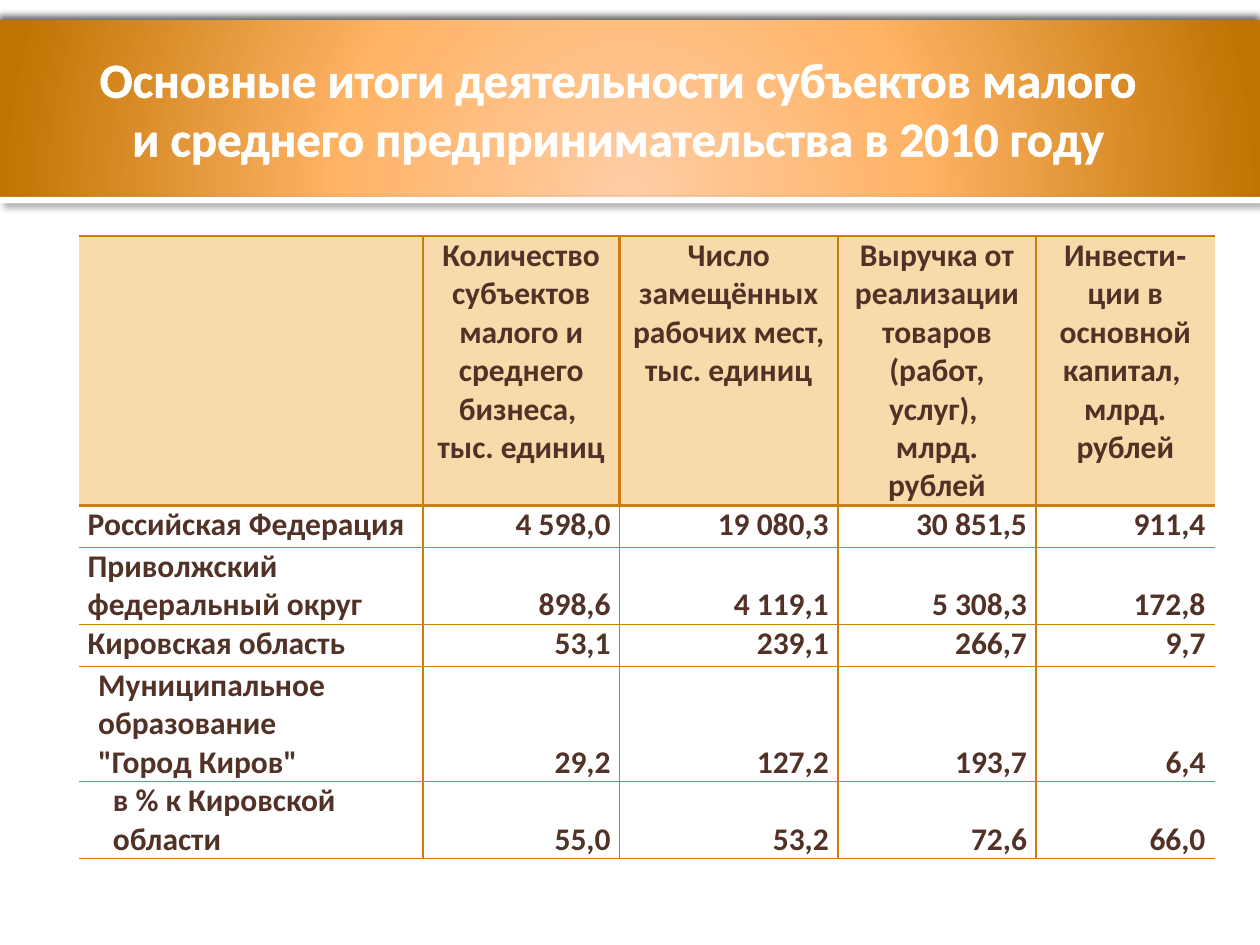
from pptx import Presentation
from pptx.dml.color import RGBColor as RGB
from pptx.enum.shapes import MSO_SHAPE as SHAPE
from pptx.enum.text import MSO_ANCHOR as ANCHOR, PP_ALIGN as ALIGN
from pptx.oxml import parse_xml
from pptx.oxml.ns import nsdecls
from pptx.util import Pt

COLORS = {"rule": "C87D0E", "header": "F9DAAB", "body": "FFFFFF",
          "ink": "523227", "white": "FFFFFF", "shadow": "000000"}
GLOW = [(0, "FFCDA5"), (46, "FFB365"), (100, "C07300")]
TITLE = ("Основные итоги деятельности субъектов малого и "
         "среднего предпринимательства в 2010 году")
HEADERS = [
    [],
    ["Количество субъектов малого и среднего бизнеса, ", "тыс. единиц"],
    ["Число замещённых рабочих мест, тыс. единиц"],
    ["Выручка от реализации товаров (работ, услуг), ", "млрд. рублей"],
    [("Инвести", "-", "ции в основной капитал, "), "млрд. рублей"],
]
REGIONS = [
    (["Российская Федерация"], 0, ["4 598,0", "19 080,3", "30 851,5", "911,4"]),
    (["Приволжский \vфедеральный округ"], 0, ["898,6", "4 119,1", "5 308,3", "172,8"]),
    (["Кировская область"], 0, ["53,1", "239,1", "266,7", "9,7"]),
    (["Муниципальное образование", "\"Город Киров\""], 6, ["29,2", "127,2", "193,7", "6,4"]),
    (["в % к Кировской области"], 14.4, ["55,0", "53,2", "72,6", "66,0"]),
]
COL_WIDTHS = [196.7, 112.5, 124.7, 113.3, 102]
ROW_HEIGHTS = [151.2, 24, 43.2, 24, 65, 43.2]
BOTTOM_ROWS = {2, 4, 5}
CELL_FORMAT = {"margin_left": Pt(5.2), "margin_right": Pt(5.2),
               "margin_top": 0, "margin_bottom": 0}
TITLE_FORMAT = {"word_wrap": True, "vertical_anchor": ANCHOR.MIDDLE,
                "margin_left": Pt(3.6), "margin_right": Pt(3.6)}


def apply(target, formats):
    for name, value in formats.items():
        setattr(target, name, value)


def solid_xml(color):
    return f'<a:solidFill><a:srgbClr val="{color}"/></a:solidFill>'


def shadow_element(alpha, blur, distance, angle):
    return parse_xml(
        f'<a:outerShdw {nsdecls("a")} blurRad="{Pt(blur)}" dist="{Pt(distance)}" '
        f'dir="{angle * 60000}" algn="tl" rotWithShape="0">'
        f'<a:srgbClr val="{COLORS["shadow"]}"><a:alpha val="{alpha * 1000}"/>'
        '</a:srgbClr></a:outerShdw>')


def add_band(slide, top, height, *shadow):
    band = slide.shapes.add_shape(SHAPE.RECTANGLE, 0, Pt(top), Pt(720), Pt(height))
    band.fill.solid()
    band.fill.fore_color.rgb = RGB.from_string(COLORS["white"])
    band.line.fill.background()
    band.shadow.inherit = False
    effects = band.element.spPr.find("{*}effectLst")
    effects.append(shadow_element(*shadow))
    return band


def add_glow(band):
    stops = "".join(f'<a:gs pos="{pos * 1000}"><a:srgbClr val="{color}"/></a:gs>'
                    for pos, color in GLOW)
    properties = band.element.spPr
    properties.replace(properties.find("{*}solidFill"), parse_xml(
        f'<a:gradFill {nsdecls("a")} rotWithShape="1"><a:gsLst>{stops}</a:gsLst>'
        '<a:path path="circle"><a:fillToRect l="50000" t="155000" r="50000" '
        'b="-55000"/></a:path></a:gradFill>'))


def style_font(font, size, color, name="Calibri"):
    apply(font, {"size": Pt(size), "bold": True, "name": name})
    font.color.rgb = RGB.from_string(color)


def add_title(slide):
    title = slide.shapes.add_textbox(Pt(44.6), Pt(16.5), Pt(617), Pt(90))
    apply(title.text_frame, TITLE_FORMAT)
    heading = title.text_frame.paragraphs[0]
    heading.alignment = ALIGN.CENTER
    run = heading.add_run()
    run.text = TITLE
    style_font(run.font, 28, COLORS["white"])
    properties = run.font.fill._xPr
    properties.insert(0, parse_xml(
        f'<a:ln {nsdecls("a")} w="{Pt(1.45)}">{solid_xml(COLORS["white"])}</a:ln>'))
    effects = parse_xml(f'<a:effectLst {nsdecls("a")}/>')
    effects.append(shadow_element(40, 2, 2, 45))
    properties.find("{*}solidFill").addnext(effects)


def fill_cell(cell, lines, align, indent=0):
    for number, line in enumerate(lines):
        frame = cell.text_frame
        paragraph = frame.add_paragraph() if number else frame.paragraphs[0]
        paragraph.alignment = align
        if indent:
            paragraph._p.get_or_add_pPr().set("marL", str(Pt(indent)))
        for index, part in enumerate([line] if isinstance(line, str) else line):
            for piece_number, piece in enumerate(part.split("\v")):
                if piece_number:
                    paragraph.add_line_break()
                run = paragraph.add_run()
                run.text = piece
                style_font(run.font, 18, COLORS["ink"],
                           "Arial" if part == "-" else "Calibri")


def rule_cell(cell, row, column):
    width = 1 if row else 1.5
    widths = {"L": width if column else 0,
              "R": width if column < len(COL_WIDTHS) - 1 else 0,
              "T": 1.5 if row < 2 else 1, "B": width}
    properties = cell._tc.get_or_add_tcPr()
    for side, points in widths.items():
        paint = solid_xml(COLORS["rule"]) if points else "<a:noFill/>"
        properties.append(parse_xml(
            f'<a:ln{side} {nsdecls("a")} w="{Pt(points)}">{paint}</a:ln{side}>'))


def add_results(slide):
    results = slide.shapes.add_table(
        len(ROW_HEIGHTS), len(COL_WIDTHS), Pt(44.9), Pt(135),
        Pt(sum(COL_WIDTHS)), Pt(sum(ROW_HEIGHTS))).table
    apply(results, {"first_row": False, "horz_banding": False})
    for column, width in zip(results.columns, COL_WIDTHS):
        column.width = Pt(width)
    for row, height in zip(results.rows, ROW_HEIGHTS):
        row.height = Pt(height)
    for row in range(len(ROW_HEIGHTS)):
        for column in range(len(COL_WIDTHS)):
            cell = results.cell(row, column)
            apply(cell, CELL_FORMAT)
            if row in BOTTOM_ROWS and column:
                cell.vertical_anchor = ANCHOR.BOTTOM
            rule_cell(cell, row, column)
            cell.fill.solid()
            cell.fill.fore_color.rgb = RGB.from_string(COLORS["body" if row else "header"])
    for column, lines in enumerate(HEADERS):
        fill_cell(results.cell(0, column), lines, ALIGN.CENTER)
    for row, (region, indent, values) in enumerate(REGIONS, 1):
        fill_cell(results.cell(row, 0), region, ALIGN.LEFT, indent)
        for column, value in enumerate(values, 1):
            fill_cell(results.cell(row, column), [value], ALIGN.RIGHT)


def main():
    deck = Presentation()
    apply(deck, {"slide_width": Pt(720), "slide_height": Pt(540)})
    slide = deck.slides.add_slide(deck.slide_layouts[6])
    add_glow(add_band(slide, 11.5, 101.5, 60, 4, 3, 245))
    add_results(slide)
    add_title(slide)
    add_band(slide, 112.5, 3.6, 40, 4, 3, 45)
    deck.save("out.pptx")


if __name__ == "__main__":
    main()
